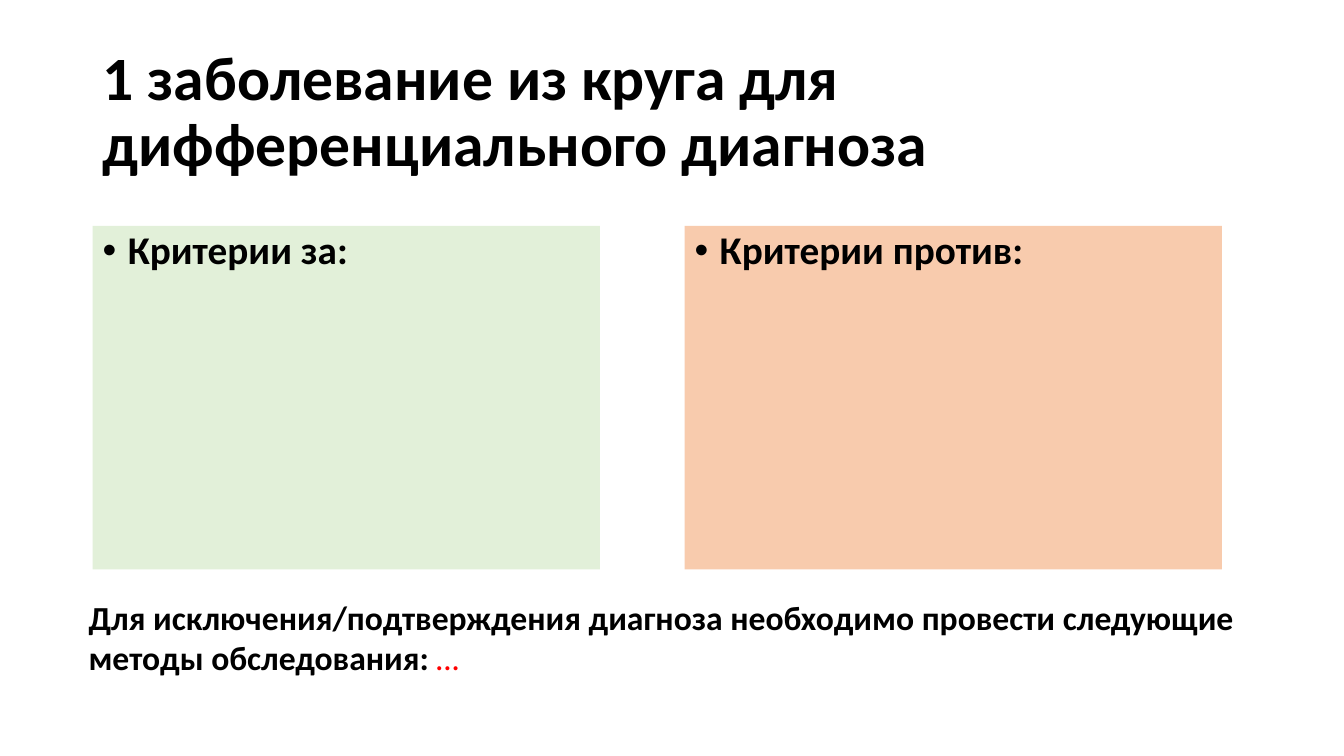
from lxml import etree
from pptx import Presentation
from pptx.dml.color import RGBColor
from pptx.enum.shapes import MSO_SHAPE
from pptx.enum.text import MSO_ANCHOR, MSO_AUTO_SIZE, PP_ALIGN
from pptx.oxml.ns import qn
from pptx.util import Inches, Pt

RECTANGLE = MSO_SHAPE.RECTANGLE
TOP, MIDDLE = MSO_ANCHOR.TOP, MSO_ANCHOR.MIDDLE
GROW = MSO_AUTO_SIZE.SHAPE_TO_FIT_TEXT
LEFT = PP_ALIGN.LEFT


def color(value):
    return RGBColor.from_string(value)


class SlideBuilder:
    font_name = "Calibri"
    ink = "000000"

    def __init__(self, page):
        self.page = page

    def fill_text(self, box, spans, size, frame_format, para_format):
        """Fill a box with one paragraph of (text, ink, font format) spans."""
        frame = box.text_frame
        for name, value in {"word_wrap": True, **frame_format}.items():
            setattr(frame, name, value)
        para = frame.paragraphs[0]
        for name, value in {"alignment": LEFT, **para_format}.items():
            setattr(para, name, value)
        for text, ink, font_format in spans:
            span = para.add_run()
            span.text = text
            span.font.color.rgb = color(ink)
            base = {"name": self.font_name, "size": Pt(size), "bold": True}
            for name, value in {**base, **font_format}.items():
                setattr(span.font, name, value)
        return para

    def text(self, area, spans, size, frame_format, para_format):
        box = self.page.shapes.add_textbox(*map(Inches, area))
        self.fill_text(box, spans, size, frame_format, para_format)

    def panel(self, area, fill, heading):
        box = self.page.shapes.add_shape(RECTANGLE, *map(Inches, area))
        box.shadow.inherit = False
        box.fill.solid()
        box.fill.fore_color.rgb = color(fill)
        box.line.fill.background()
        para = self.fill_text(box, [(heading, self.ink, {})], 28,
                              {"vertical_anchor": TOP},
                              {"line_spacing": 0.9, "space_before": Pt(10)})
        # Bullet with a hanging indent
        properties = para._p.get_or_add_pPr()
        properties.set("marL", str(Inches(0.25)))
        properties.set("indent", str(Inches(-0.25)))
        for tag, key, value in (("a:buFont", "typeface", "Arial"),
                                ("a:buChar", "char", "•")):
            etree.SubElement(properties, qn(tag)).set(key, value)


def main():
    deck = Presentation()
    deck.slide_width, deck.slide_height = Inches(13.33), Inches(7.5)
    builder = SlideBuilder(deck.slides.add_slide(deck.slide_layouts[6]))
    ink = builder.ink

    # Title
    builder.text((0.92, 0.4, 11.5, 1.45),
                 [("1 заболевание из круга для дифференциального диагноза", ink, {})],
                 44, {"vertical_anchor": MIDDLE}, {"line_spacing": 0.9})

    # Criteria panels
    for left, width, fill, heading in (
            (0.92, 5.03, "E2F0D9", "Критерии за:"),
            (6.79, 5.33, "F8CBAD", "Критерии против:")):
        builder.panel((left, 2.24, width, 3.41), fill, heading)

    # Examination methods
    builder.text((0.78, 5.87, 11.92, 0.91),
                 [("Для исключения/подтверждения диагноза необходимо провести "
                   "следующие методы обследования: ", ink, {}),
                  ("…", "FF0000", {"bold": False, "italic": True})],
                 24, {"auto_size": GROW}, {})

    deck.save("out.pptx")


if __name__ == "__main__":
    main()
